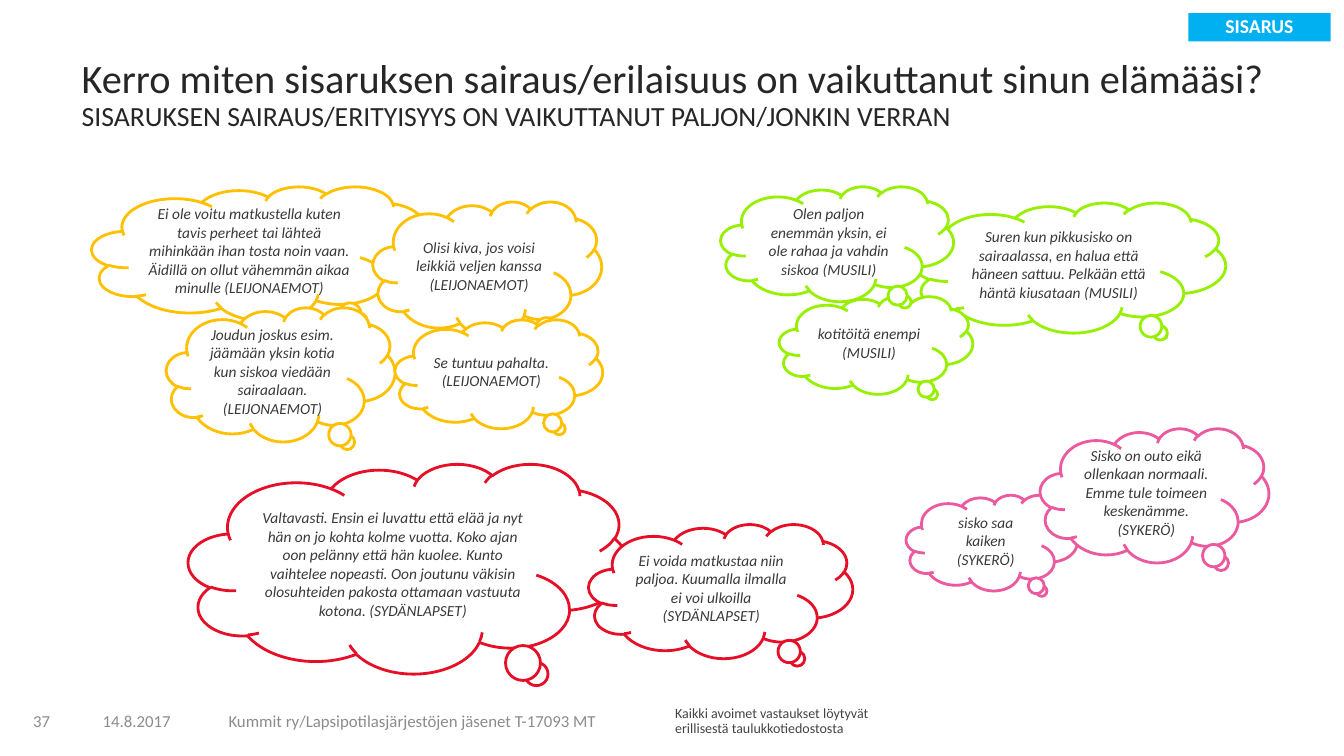
from dataclasses import dataclass

from pptx import Presentation
from pptx.dml.color import RGBColor
from pptx.enum.shapes import MSO_SHAPE as Shape
from pptx.enum.text import MSO_ANCHOR as Anchor, MSO_AUTO_SIZE as AutoSize, PP_ALIGN as Align
from pptx.slide import Slide
from pptx.text.text import TextFrame
from pptx.util import Pt

FONT = "Calibri"
WHITE = RGBColor(0xFF, 0xFF, 0xFF)
TITLE_INK = RGBColor(0x26, 0x26, 0x26)
QUOTE_INK = RGBColor(0x3B, 0x38, 0x38)
NOTE_INK = RGBColor(0x44, 0x44, 0x44)
FOOTER_INK = RGBColor(0x8C, 0x8C, 0x8C)
TAG_BLUE = RGBColor(0x00, 0xB0, 0xF0)
YELLOW = RGBColor(0xFF, 0xC0, 0x00)
GREEN = RGBColor(0x96, 0xF0, 0x00)
RED = RGBColor(0xE6, 0x0F, 0x28)
PINK = RGBColor(0xEB, 0x59, 0x9E)


@dataclass(frozen=True)
class Box:
    left: float
    top: float
    width: float
    height: float

    def emu(self) -> tuple[Pt, Pt, Pt, Pt]:
        return Pt(self.left), Pt(self.top), Pt(self.width), Pt(self.height)


@dataclass(frozen=True)
class Style:
    size: float
    color: RGBColor
    bold: bool = False
    italic: bool = False
    align: Align = Align.LEFT
    anchor: Anchor = Anchor.MIDDLE
    spacing: float = 1.0


@dataclass(frozen=True)
class Quote:
    box: Box
    color: RGBColor
    text: str


@dataclass(frozen=True)
class Label:
    box: Box
    style: Style
    text: str


TITLE = Style(28.8, TITLE_INK, anchor=Anchor.TOP, spacing=0.9)
SUBTITLE_SIZE = Pt(19.8)
TAG = Style(14, WHITE, bold=True, align=Align.CENTER, spacing=0.9)
QUOTE = Style(11, QUOTE_INK, italic=True, align=Align.CENTER)
FOOTER = Style(12, FOOTER_INK)
NOTE = Style(10, NOTE_INK, anchor=Anchor.TOP, spacing=0.9)

LABELS = [
    Label(Box(16.6, 500.4, 31.7, 28.8), FOOTER, "37"),
    Label(Box(66.2, 500.4, 72.7, 28.8), FOOTER, "14.8.2017"),
    Label(Box(156.2, 500.4, 328.3, 28.8), FOOTER,
          "Kummit ry/Lapsipotilasjärjestöjen jäsenet T-17093 MT"),
    Label(Box(475.2, 501.1, 162, 29.5), NOTE,
          "Kaikki avoimet vastaukset löytyvät erillisestä taulukkotiedostosta"),
]

# Listed from back to front
QUOTES = [
    Quote(Box(65.5, 133.2, 242.6, 95.8), YELLOW,
          "Ei ole voitu matkustella kuten tavis perheet tai lähteä mihinkään ihan "
          "tosta noin vaan. Äidillä on ollut vähemmän aikaa minulle (LEIJONAEMOT)"),
    Quote(Box(266.4, 144, 163.4, 95.8), YELLOW,
          "Olisi kiva, jos voisi leikkiä veljen kanssa (LEIJONAEMOT)"),
    Quote(Box(118.8, 219.6, 163.4, 95.8), YELLOW,
          "Joudun joskus esim. jäämään yksin kotia kun siskoa viedään sairaalaan. "
          "(LEIJONAEMOT)"),
    Quote(Box(653, 144.7, 222.5, 92.9), GREEN,
          "Suren kun pikkusisko on sairaalassa, en halua että häneen sattuu. "
          "Pelkään että häntä kiusataan (MUSILI)"),
    Quote(Box(556.6, 211.7, 138.2, 69.8), GREEN, "kotitöitä enempi (MUSILI)"),
    Quote(Box(514.8, 133.2, 166.3, 82.1), GREEN,
          "Olen paljon enemmän yksin, ei ole rahaa ja vahdin siskoa (MUSILI)"),
    Quote(Box(134.6, 331.2, 314.6, 149.8), RED,
          "Valtavasti. Ensin ei luvattu että elää ja nyt hän on jo kohta kolme vuotta. "
          "Koko ajan oon pelänny että hän kuolee. Kunto vaihtelee nopeasti. Oon joutunu "
          "väkisin olosuhteiden pakosta ottamaan vastuuta kotona. (SYDÄNLAPSET)"),
    Quote(Box(420.5, 374.4, 188.6, 95.8), RED,
          "Ei voida matkustaa niin paljoa. Kuumalla ilmalla ei voi ulkoilla "
          "(SYDÄNLAPSET)"),
    Quote(Box(647.3, 353.5, 122.4, 68.4), PINK, "sisko saa kaiken\n(SYKERÖ)"),
    Quote(Box(743, 306, 163.4, 95.8), PINK,
          "Sisko on outo eikä ollenkaan normaali. Emme tule toimeen keskenämme. "
          "(SYKERÖ)"),
    Quote(Box(282.2, 228.2, 148.3, 77.8), YELLOW, "Se tuntuu pahalta.\n(LEIJONAEMOT)"),
]


def write(tf: TextFrame, text: str, style: Style) -> None:
    tf.text = text
    tf.word_wrap = True
    tf.auto_size = AutoSize.NONE
    tf.vertical_anchor = style.anchor
    for p in tf.paragraphs:
        p.alignment = style.align
        p.line_spacing = style.spacing
        for r in p.runs:
            r.font.name = FONT
            r.font.size = Pt(style.size)
            r.font.bold = style.bold
            r.font.italic = style.italic
            r.font.color.rgb = style.color


def add_title(s: Slide) -> None:
    sp = s.shapes.title
    sp.left, sp.top, sp.width, sp.height = Box(51.1, 38.2, 869, 49).emu()
    write(sp.text_frame,
          "Kerro miten sisaruksen sairaus/erilaisuus on vaikuttanut sinun elämääsi?\v"
          "SISARUKSEN SAIRAUS/ERITYISYYS ON VAIKUTTANUT PALJON/JONKIN VERRAN", TITLE)
    sp.text_frame.paragraphs[0].runs[1].font.size = SUBTITLE_SIZE


def add_tag(s: Slide) -> None:
    sp = s.shapes.add_shape(Shape.RECTANGLE, *Box(848.9, 9.4, 101.5, 20.2).emu())
    sp.shadow.inherit = False
    sp.fill.solid()
    sp.fill.fore_color.rgb = TAG_BLUE
    sp.line.fill.background()
    write(sp.text_frame, "SISARUS", TAG)


def add_quote(s: Slide, quote: Quote) -> None:
    sp = s.shapes.add_shape(Shape.CLOUD_CALLOUT, *quote.box.emu())
    sp.adjustments[0], sp.adjustments[1] = 0.3, 0.52
    sp.shadow.inherit = False
    sp.fill.solid()
    sp.fill.fore_color.rgb = WHITE
    sp.line.color.rgb = quote.color
    sp.line.width = Pt(2)
    write(sp.text_frame, quote.text, QUOTE)


def add_label(s: Slide, label: Label) -> None:
    sp = s.shapes.add_textbox(*label.box.emu())
    write(sp.text_frame, label.text, label.style)


def main() -> None:
    prs = Presentation()
    prs.slide_width, prs.slide_height = Pt(960), Pt(540)
    s = prs.slides.add_slide(prs.slide_layouts.get_by_name("Title Only"))
    add_title(s)
    add_tag(s)
    for quote in QUOTES:
        add_quote(s, quote)
    for label in LABELS:
        add_label(s, label)
    prs.save("out.pptx")


if __name__ == "__main__":
    main()
